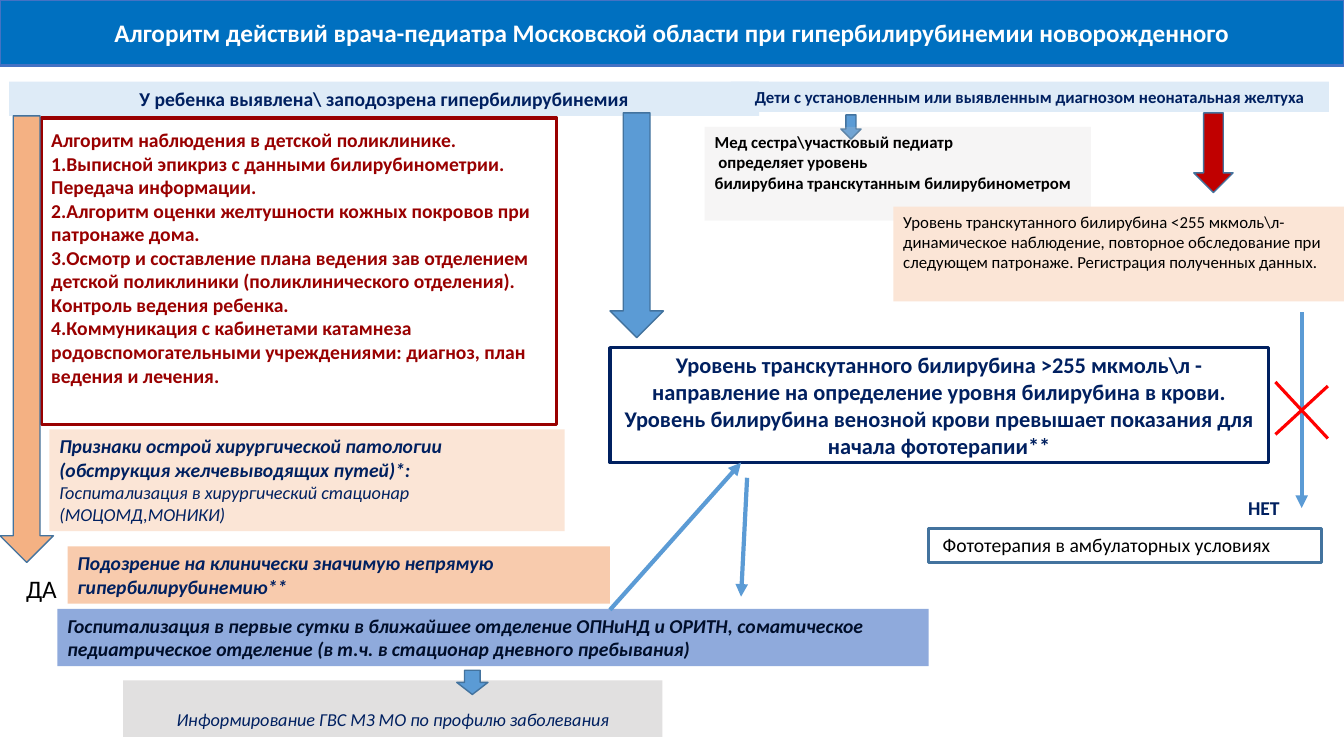
from dataclasses import dataclass

from lxml.etree import SubElement
from pptx import Presentation
from pptx.dml.color import RGBColor
from pptx.enum.shapes import MSO_CONNECTOR, MSO_SHAPE
from pptx.enum.text import MSO_ANCHOR, PP_ALIGN
from pptx.oxml.ns import qn
from pptx.util import Inches, Pt

WHITE = RGBColor(0xFF, 0xFF, 0xFF)
BLACK = RGBColor(0x00, 0x00, 0x00)
NAVY = RGBColor(0x00, 0x20, 0x60)
INK = RGBColor(0x00, 0x0E, 0x2A)
TITLE_BLUE = RGBColor(0x00, 0x70, 0xC0)
TITLE_EDGE = RGBColor(0x44, 0x72, 0xC4)
PALE_BLUE = RGBColor(0xDE, 0xEB, 0xF7)
ARROW_BLUE = RGBColor(0x5B, 0x9B, 0xD5)
ARROW_EDGE = RGBColor(0x43, 0x73, 0x9E)
HOSPITAL_BLUE = RGBColor(0x8F, 0xAA, 0xDC)
MAROON = RGBColor(0x99, 0x00, 0x00)
DARK_RED = RGBColor(0xC0, 0x00, 0x00)
RED = RGBColor(0xFF, 0x00, 0x00)
ORANGE = RGBColor(0xF4, 0xB1, 0x83)
PEACH = RGBColor(0xF8, 0xCB, 0xAD)
PALE_PEACH = RGBColor(0xFB, 0xE5, 0xD6)
GREY = RGBColor(0xD0, 0xCE, 0xCE)


@dataclass
class Box:
    """Rectangle in inches."""
    left: float
    top: float
    width: float
    height: float

    def inner(self, right, down, width, height):
        """Return a box offset from this one's top left corner."""
        return Box(self.left + right, self.top + down, width, height)

    def lengths(self):
        """Return the four sides as slide lengths."""
        return [Inches(side) for side in (self.left, self.top, self.width, self.height)]


def write(shape, lines, color, size=14, bold=True, italic=False, center=False,
          middle=False, wrap=True, insets=None):
    """Fill a shape with paragraphs; a line may be a (text, format) pair."""
    frame = shape.text_frame
    frame.word_wrap = wrap
    frame.vertical_anchor = MSO_ANCHOR.MIDDLE if middle else MSO_ANCHOR.TOP
    for side, inset in (insets or {}).items():
        setattr(frame, f"margin_{side}", Inches(inset))
    for number, line in enumerate(lines):
        text, changes = line if isinstance(line, tuple) else (line, {})
        para = frame.add_paragraph() if number else frame.paragraphs[0]
        para.text = text
        para.alignment = PP_ALIGN.CENTER if center else PP_ALIGN.LEFT
        style = {"name": "Calibri", "size": Pt(size), "bold": bold, "italic": italic} | changes
        for span in para.runs:
            for name, value in style.items():
                setattr(span.font, name, value)
            span.font.color.rgb = color


def add_block(page, box, kind=MSO_SHAPE.RECTANGLE, fill=None, edge=None, weight=1, opacity=100):
    """Add a preset shape with the given fill and outline."""
    shape = page.shapes.add_shape(kind, *box.lengths())
    shape.shadow.inherit = False
    if fill is None:
        shape.fill.background()
    else:
        shape.fill.solid()
        shape.fill.fore_color.rgb = fill
    if opacity < 100:
        tint = shape._element.spPr.find(qn("a:solidFill")).find(qn("a:srgbClr"))
        SubElement(tint, qn("a:alpha"), val=str(opacity * 1000))
    if edge is None:
        shape.line.fill.background()
    else:
        shape.line.color.rgb = edge
        shape.line.width = Pt(weight)
    return shape


def add_down_arrow(page, box, fill=ARROW_BLUE):
    """Add a block arrow pointing down."""
    add_block(page, box, MSO_SHAPE.DOWN_ARROW, fill, ARROW_EDGE)


def add_line(page, box, color=ARROW_BLUE, weight=3, head=True):
    """Add a line across a box, whose width or height may be negative."""
    ends = box.left, box.top, box.left + box.width, box.top + box.height
    line = page.shapes.add_connector(MSO_CONNECTOR.STRAIGHT, *[Inches(end) for end in ends])
    line.line.color.rgb = color
    line.line.width = Pt(weight)
    properties = line._element.spPr
    if head:
        SubElement(properties.find(qn("a:ln")), qn("a:tailEnd"), type="triangle")
    SubElement(properties, qn("a:effectLst"))


def add_title(page, box):
    """Draw the title bar."""
    bar = add_block(page, box, fill=TITLE_BLUE, edge=TITLE_EDGE, weight=1.5)
    write(bar, ["Алгоритм действий врача-педиатра Московской области при гипербилирубинемии новорожденного"],
          WHITE, size=18, center=True, middle=True, wrap=False)


def add_starting_points(page, box):
    """Draw the two pale headings that start the branches."""
    suspected = add_block(page, box.inner(0, 0, 7.44, 0.34), fill=PALE_BLUE)
    write(suspected, ["У ребенка выявлена\\ заподозрена гипербилирубинемия"], NAVY, center=True)
    diagnosed = add_block(page, box.inner(7.16, 0, 5.93, 0.3), fill=PALE_BLUE)
    write(diagnosed, ["Дети с установленным или выявленным диагнозом неонатальная желтуха"],
          NAVY, size=12, center=True)


def add_clinic_branch(page, box):
    """Draw the clinic follow-up column with its long arrow."""
    follow_up = add_block(page, box.inner(0.41, 0.02, 5.11, 3.04), edge=MAROON, weight=2.5)
    write(follow_up, [
        "Алгоритм наблюдения в детской поликлинике.",
        "1.Выписной эпикриз с данными билирубинометрии. Передача информации.",
        "2.Алгоритм оценки желтушности кожных покровов при патронаже дома.",
        "3.Осмотр и составление плана ведения зав отделением детской поликлиники "
        "(поликлинического отделения). Контроль ведения ребенка.",
        "4.Коммуникация с кабинетами катамнеза родовспомогательными учреждениями: "
        "диагноз, план ведения и лечения.",
    ], MAROON, middle=True, insets={"bottom": 0.32})
    add_down_arrow(page, box.inner(0, 0, 0.53, 4.43), ORANGE)
    surgery = add_block(page, box.inner(0.49, 3.11, 5.11, 1.01), fill=PALE_PEACH)
    write(surgery, [
        "Признаки острой хирургической патологии (обструкция желчевыводящих путей)*:",
        ("Госпитализация в хирургический стационар (МОЦОМД,МОНИКИ)",
         {"size": Pt(13), "bold": False}),
    ], NAVY, italic=True)
    yes = page.shapes.add_textbox(*box.inner(0.16, 4.49, 0.51, 0.4).lengths())
    write(yes, ["ДА"], BLACK, size=18, bold=False, wrap=False)


def add_hospital_branch(page, box):
    """Draw the admission steps at the foot of the slide."""
    suspicion = add_block(page, box.inner(0.1, 0, 5.38, 0.57), fill=PEACH)
    write(suspicion, ["Подозрение на клинически значимую непрямую гипербилирубинемию**"],
          NAVY, italic=True)
    admission = add_block(page, box.inner(0, 0.62, 8.64, 0.57), fill=HOSPITAL_BLUE)
    write(admission, [
        "Госпитализация в первые сутки в ближайшее отделение ОПНиНД и ОРИТН, соматическое "
        "педиатрическое отделение (в т.ч. в стационар дневного пребывания)",
    ], INK, italic=True)
    report = add_block(page, box.inner(0.65, 1.33, 5.35, 0.56), fill=GREY, opacity=63)
    write(report, ["Информирование ГВС МЗ МО по профилю заболевания"], NAVY, size=13,
          bold=False, italic=True, center=True, insets={"top": 0.28})
    add_down_arrow(page, box.inner(3.96, 1.23, 0.31, 0.24))


def add_screening(page, box):
    """Draw the bilirubin measurement and the low-level result."""
    add_down_arrow(page, box.inner(1.35, 0.02, 0.2, 0.24))
    nurse = add_block(page, box.inner(0, 0.14, 3.83, 0.93), fill=GREY, opacity=19)
    write(nurse, [
        "Мед сестра\\участковый педиатр",
        " определяет уровень\vбилирубина транскутанным билирубинометром",
    ], BLACK, size=12)
    low_level = add_block(page, box.inner(1.87, 0.93, 4.47, 0.94), fill=PALE_PEACH)
    write(low_level, [
        "Уровень транскутанного билирубина <255 мкмоль\\л- динамическое наблюдение, "
        "повторное обследование при следующем патронаже. Регистрация полученных данных.",
    ], BLACK, size=12, bold=False)
    add_down_arrow(page, box.inner(4.85, 0, 0.39, 0.79), DARK_RED)


def add_treatment(page, box):
    """Draw the high-level result, its arrows and outpatient phototherapy."""
    high_level = add_block(page, box.inner(0, 2.33, 6.53, 1.14), edge=NAVY, weight=2.5)
    write(high_level, [
        "Уровень транскутанного билирубина >255 мкмоль\\л - направление на определение "
        "уровня билирубина в крови.",
        "Уровень билирубина венозной крови превышает показания для начала фототерапии**",
    ], NAVY, size=16, center=True, middle=True)
    outpatient = add_block(page, box.inner(3.16, 4.12, 3.9, 0.34), edge=ARROW_EDGE, weight=2.25)
    write(outpatient, ["Фототерапия в амбулаторных условиях"], BLACK, bold=False,
          insets={"left": 0.14})
    add_down_arrow(page, box.inner(0, 0, 0.53, 2.23))
    no = page.shapes.add_textbox(*box.inner(6.19, 3.75, 0.59, 0.34).lengths())
    write(no, ["НЕТ"], NAVY, center=True)
    for arrow in ((6.86, 1.98, 0, 1.94), (1.36, 3.62, -0.06, 1.18), (0, 4.93, 1.3, -1.46)):
        add_line(page, box.inner(*arrow))
    for stroke in ((6.6, 2.67, 0.52, 0.56), (7.12, 2.71, -0.52, 0.48)):
        add_line(page, box.inner(*stroke), RED, 2.25, head=False)


def main():
    """Build and save the slide."""
    deck = Presentation()
    deck.slide_width, deck.slide_height = Inches(13.33), Inches(7.5)
    page = deck.slides.add_slide(deck.slide_layouts[6])
    add_title(page, Box(0, 0, 13.33, 0.65))
    add_starting_points(page, Box(0.09, 0.81, 13.09, 0.34))
    add_clinic_branch(page, Box(0, 1.15, 5.6, 4.89))
    add_hospital_branch(page, Box(0.57, 5.42, 8.64, 1.89))
    add_screening(page, Box(6.99, 1.12, 6.34, 1.87))
    add_treatment(page, Box(6.05, 1.12, 7.12, 4.93))
    deck.save("out.pptx")


if __name__ == "__main__":
    main()
